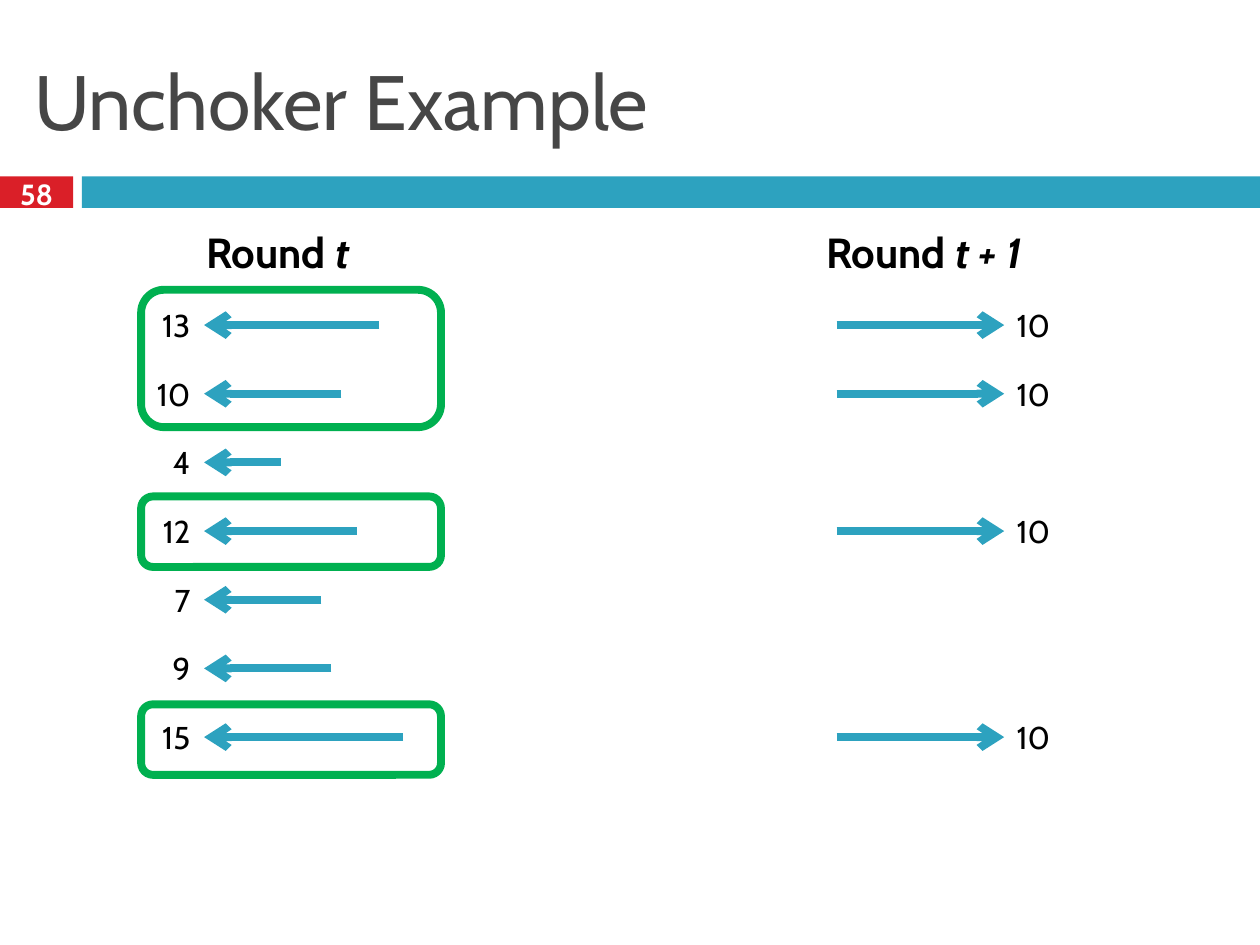
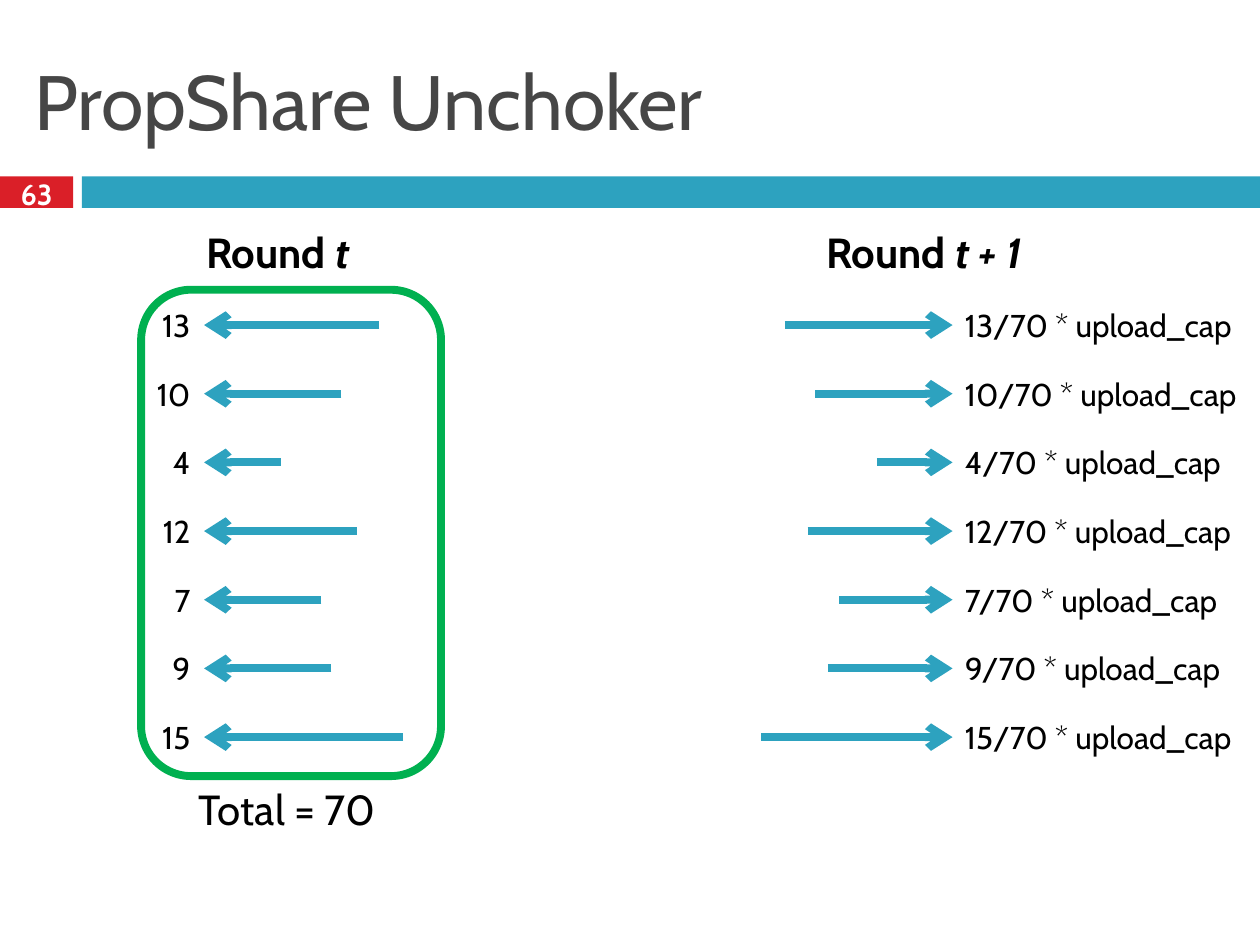
from dataclasses import dataclass

from lxml import etree
from pptx import Presentation
from pptx.dml.color import RGBColor
from pptx.enum.shapes import MSO_CONNECTOR, MSO_SHAPE
from pptx.enum.text import MSO_ANCHOR, MSO_AUTO_SIZE, PP_ALIGN
from pptx.oxml.ns import qn
from pptx.util import Inches, Pt

STRAIGHT = MSO_CONNECTOR.STRAIGHT
RECT, ROUND_RECT = MSO_SHAPE.RECTANGLE, MSO_SHAPE.ROUNDED_RECTANGLE
TOP, MIDDLE = MSO_ANCHOR.TOP, MSO_ANCHOR.MIDDLE
LEFT, CENTER, RIGHT = PP_ALIGN.LEFT, PP_ALIGN.CENTER, PP_ALIGN.RIGHT
NO_AUTOFIT = MSO_AUTO_SIZE.NONE
TITLE_ONLY = 5


@dataclass(frozen=True)
class Theme:
    font: str = "Cabin"
    title: str = "464646"
    text: str = "000000"
    white: str = "FFFFFF"
    red: str = "DA1F28"
    blue: str = "2DA2BF"
    green: str = "00B050"
    title_size: float = 44
    heading_size: float = 24
    label_size: float = 18
    number_size: float = 16.6
    line_width: float = 4.5


@dataclass(frozen=True)
class Peer:
    rate: int
    received: float
    shared: float


@dataclass(frozen=True)
class Frame:
    top: float
    height: float


@dataclass(frozen=True)
class Upload:
    row: int
    length: float
    label: str


THEME = Theme()
PEERS = [
    Peer(13, 1.39, 1.33),
    Peer(10, 1.09, 1.09),
    Peer(4, 0.61, 0.6),
    Peer(12, 1.21, 1.15),
    Peer(7, 0.93, 0.9),
    Peer(9, 1.01, 0.99),
    Peer(15, 1.58, 1.52),
]
TOTAL = sum(peer.rate for peer in PEERS)
UNCHOKED_ROWS = (0, 1, 3, 6)
FIRST_ROW, LAST_ROW = 2.58, 5.85
ROW_GAP = (LAST_ROW - FIRST_ROW) / (len(PEERS) - 1)
LABEL_HEIGHT = 0.4
RECEIVED_X = 1.62


def row_y(row: int) -> float:
    return FIRST_ROW + row * ROW_GAP


def rgb(color: str) -> RGBColor:
    return RGBColor.from_string(color)


def write(sp, text: str, *, size: float, color: str = THEME.text,
          bold: bool = False, italic_tail: str = "", align=LEFT, anchor=TOP) -> None:
    tf = sp.text_frame
    tf.word_wrap = True
    tf.auto_size = NO_AUTOFIT
    tf.vertical_anchor = anchor
    p = tf.paragraphs[0]
    p.alignment = align
    for part, italic in ((text, False), (italic_tail, True)):
        if part:
            r = p.add_run()
            r.text = part
            r.font.name = THEME.font
            r.font.size = Pt(size)
            r.font.bold = bold
            r.font.italic = italic
            r.font.color.rgb = rgb(color)


def add_text(slide, text: str, x: float, y: float, w: float, h: float, **style) -> None:
    sp = slide.shapes.add_textbox(Inches(x), Inches(y), Inches(w), Inches(h))
    write(sp, text, **style)


def add_band(slide, x: float, w: float, color: str) -> None:
    sp = slide.shapes.add_shape(RECT, Inches(x), Inches(1.4), Inches(w), Inches(0.25))
    sp.shadow.inherit = False
    sp.fill.solid()
    sp.fill.fore_color.rgb = rgb(color)
    sp.line.fill.background()


def add_frame(slide, frame: Frame) -> None:
    sp = slide.shapes.add_shape(ROUND_RECT, Inches(1.12), Inches(frame.top),
                                Inches(2.38), Inches(frame.height))
    sp.shadow.inherit = False
    sp.fill.background()
    sp.line.color.rgb = rgb(THEME.green)
    sp.line.width = Pt(THEME.line_width)


def add_arrow(slide, x1: float, x2: float, y: float) -> None:
    line = slide.shapes.add_connector(STRAIGHT, Inches(x1), Inches(y), Inches(x2), Inches(y))
    line.line.color.rgb = rgb(THEME.blue)
    line.line.width = Pt(THEME.line_width)
    etree.SubElement(line.line._get_or_add_ln(), qn("a:tailEnd"), type="arrow")
    etree.SubElement(line._element.spPr, qn("a:effectLst"))


def add_row_label(slide, text: str, x: float, w: float, row: int, align=LEFT) -> None:
    add_text(slide, text, x, row_y(row) - LABEL_HEIGHT / 2, w, LABEL_HEIGHT,
             size=THEME.label_size, align=align)


def add_base_slide(prs, title: str, number: int):
    slide = prs.slides.add_slide(prs.slide_layouts[TITLE_ONLY])
    add_band(slide, 0, 0.58, THEME.red)
    add_band(slide, 0.65, 9.35, THEME.blue)
    sp = slide.shapes.title
    sp.left, sp.top, sp.width, sp.height = map(Inches, (0.17, 0.25, 9.67, 1.08))
    write(sp, title, size=THEME.title_size, color=THEME.title, anchor=MIDDLE)
    add_text(slide, str(number), 0, 1.37, 0.58, 0.33, size=THEME.number_size,
             color=THEME.white, bold=True, align=CENTER, anchor=MIDDLE)
    return slide


def add_rounds_slide(prs, title: str, number: int, frames: list[Frame],
                     uploads: list[Upload], upload_x: float):
    slide = add_base_slide(prs, title, number)
    for x, w, when in ((1.54, 1.47, "t"), (6.46, 2.04, "t + 1")):
        add_text(slide, "Round ", x, 1.75, w, 0.5, size=THEME.heading_size,
                 bold=True, italic_tail=when)
    for row, peer in enumerate(PEERS):
        add_arrow(slide, RECEIVED_X + peer.received, RECEIVED_X, row_y(row))
        add_row_label(slide, str(peer.rate), 1.13, 0.48, row, align=RIGHT)
    for frame in frames:
        add_frame(slide, frame)
    for upload in uploads:
        add_arrow(slide, upload_x - upload.length, upload_x, row_y(upload.row))
        add_row_label(slide, upload.label, upload_x, 10 - upload_x, upload.row)
    return slide


def main() -> None:
    prs = Presentation()
    prs.slide_width, prs.slide_height = Inches(10), Inches(7.5)

    equal = [Upload(row, 1.33, "10") for row in UNCHOKED_ROWS]
    add_rounds_slide(prs, "Unchoker Example", 58,
                     [Frame(2.3, 1.09), Frame(3.94, 0.56), Frame(5.59, 0.56)],
                     equal, 7.97)

    proportional = [Upload(row, peer.shared, f"{peer.rate}/{TOTAL} * upload_cap")
                    for row, peer in enumerate(PEERS)]
    slide = add_rounds_slide(prs, "PropShare Unchoker", 63, [Frame(2.3, 3.86)],
                             proportional, 7.56)
    add_text(slide, f"Total = {TOTAL}", 1.48, 6.17, 1.67, 0.5, size=THEME.heading_size)

    prs.save("out.pptx")


if __name__ == "__main__":
    main()
